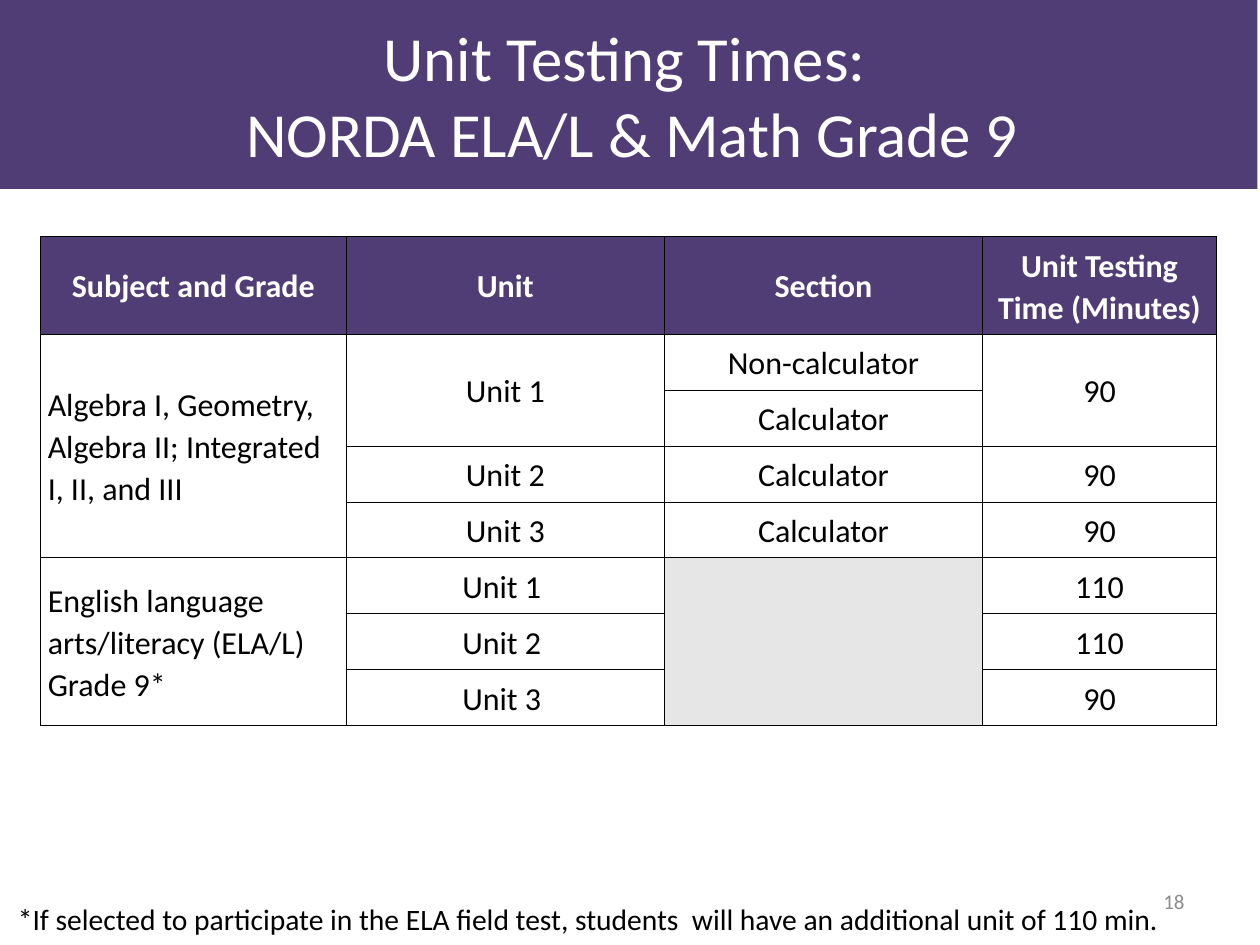
from lxml.etree import SubElement
from pptx import Presentation
from pptx.dml.color import RGBColor
from pptx.enum.shapes import MSO_SHAPE
from pptx.enum.text import MSO_ANCHOR, PP_ALIGN
from pptx.oxml.ns import qn
from pptx.util import Inches, Pt

WIDE, HIGH = 14.22, 10.66
PURPLE, WHITE, BLACK, PALE, GRAY = "513D75", "FFFFFF", "000000", "E7E6E6", "8C8C8C"
LEFT, MID, RIGHT = PP_ALIGN.LEFT, PP_ALIGN.CENTER, PP_ALIGN.RIGHT
COLS = (24.26, 25.25, 25.25, 18.57)
HEAD, ROW = 10.33, 5.92
ROWS = [
    ["Subject and Grade", "Unit", "Section", "Unit Testing Time (Minutes)"],
    ["Algebra I, Geometry, Algebra II; Integrated I, II, and III",
     "Unit 1", "Non-calculator", "90"],
    [None, None, "Calculator", None],
    [None, "Unit 2", "Calculator", "90"],
    [None, "Unit 3", "Calculator", "90"],
    ["English language arts/literacy (ELA/L) Grade 9*", "Unit 1 ", "", "110"],
    [None, "Unit 2 ", None, "110"],
    [None, "Unit 3 ", None, "90"],
]


def across(share):
    return Inches(WIDE * share / 100)


def down(share):
    return Inches(HIGH * share / 100)


def place(x, y, w, h):
    return across(x), down(y), across(w), down(h)


def color(code):
    return RGBColor.from_string(code)


def paint(item, code):
    item.fill.solid()
    item.fill.fore_color.rgb = color(code)


def write(frame, words, size, code, align, bold=False, space=None):
    frame.text = words
    frame.word_wrap = True
    for para in frame.paragraphs:
        para.alignment = align
        para.line_spacing = space
        for run in para.runs:
            font = run.font
            font.name, font.size, font.bold = "Calibri", Pt(size), bold
            font.color.rgb = color(code)


def add_bar(slide, box, code):
    bar = slide.shapes.add_shape(MSO_SHAPE.RECTANGLE, *place(*box))
    bar.shadow.inherit = False
    paint(bar, code)
    bar.line.fill.background()


def add_text(slide, box, words, size, code, align, anchor=MSO_ANCHOR.MIDDLE):
    frame = slide.shapes.add_textbox(*place(*box)).text_frame
    write(frame, words, size, code, align)
    frame.vertical_anchor = anchor
    frame.margin_left = frame.margin_right = across(1)
    frame.margin_top = frame.margin_bottom = down(0.67)


def add_edges(cell):
    props = cell._tc.get_or_add_tcPr()
    for side in ("lnL", "lnR", "lnT", "lnB"):
        line = SubElement(props, qn("a:" + side), w=str(Pt(1)))
        fill = SubElement(line, qn("a:solidFill"))
        SubElement(fill, qn("a:srgbClr"), val=BLACK)


def fill_cell(cell, words, top, first):
    cell.vertical_anchor = MSO_ANCHOR.MIDDLE
    cell.margin_left = cell.margin_right = across(0.56)
    cell.margin_top = cell.margin_bottom = down(0.75)
    add_edges(cell)
    paint(cell, PURPLE if top else PALE if words == "" else WHITE)
    if words:
        align = LEFT if first and not top else MID
        write(cell.text_frame, words, 26, WHITE if top else BLACK, align, top, 1.07)


def add_grid(slide, x, y):
    count = len(ROWS)
    box = place(x, y, sum(COLS), HEAD + ROW * (count - 1))
    table = slide.shapes.add_table(count, len(COLS), *box).table
    table.first_row = table.horz_banding = False
    for col, share in zip(table.columns, COLS):
        col.width = across(share)
    for r, row in enumerate(table.rows):
        row.height = down(ROW if r else HEAD)
    for c in range(len(COLS)):
        for r in range(count):
            fill_cell(table.cell(r, c), ROWS[r][c], r == 0, c == 0)
        starts = [r for r in range(count) if ROWS[r][c] is not None]
        for start, end in zip(starts, starts[1:] + [count]):
            if end - start > 1:
                table.cell(start, c).merge(table.cell(end - 1, c))


def main():
    deck = Presentation()
    deck.slide_width, deck.slide_height = Inches(WIDE), Inches(HIGH)
    slide = deck.slides.add_slide(deck.slide_layouts[6])
    add_bar(slide, (0, 0, 99.79, 20), PURPLE)
    add_text(slide, (0.14, 0, 100, 20),
             "Unit Testing Times: \vNORDA ELA/L & Math Grade 9", 51, WHITE, MID)
    add_text(slide, (71.66, 92.68, 23.35, 5.35), "18", 17, GRAY, RIGHT)
    add_grid(slide, 3.23, 25.05)
    add_text(slide, (0.42, 94.65, 98.95, 5.16),
             "*If selected to participate in the ELA field test, students  "
             "will have an additional unit of 110 min.",
             24, BLACK, LEFT, MSO_ANCHOR.TOP)
    deck.save("out.pptx")


if __name__ == "__main__":
    main()
